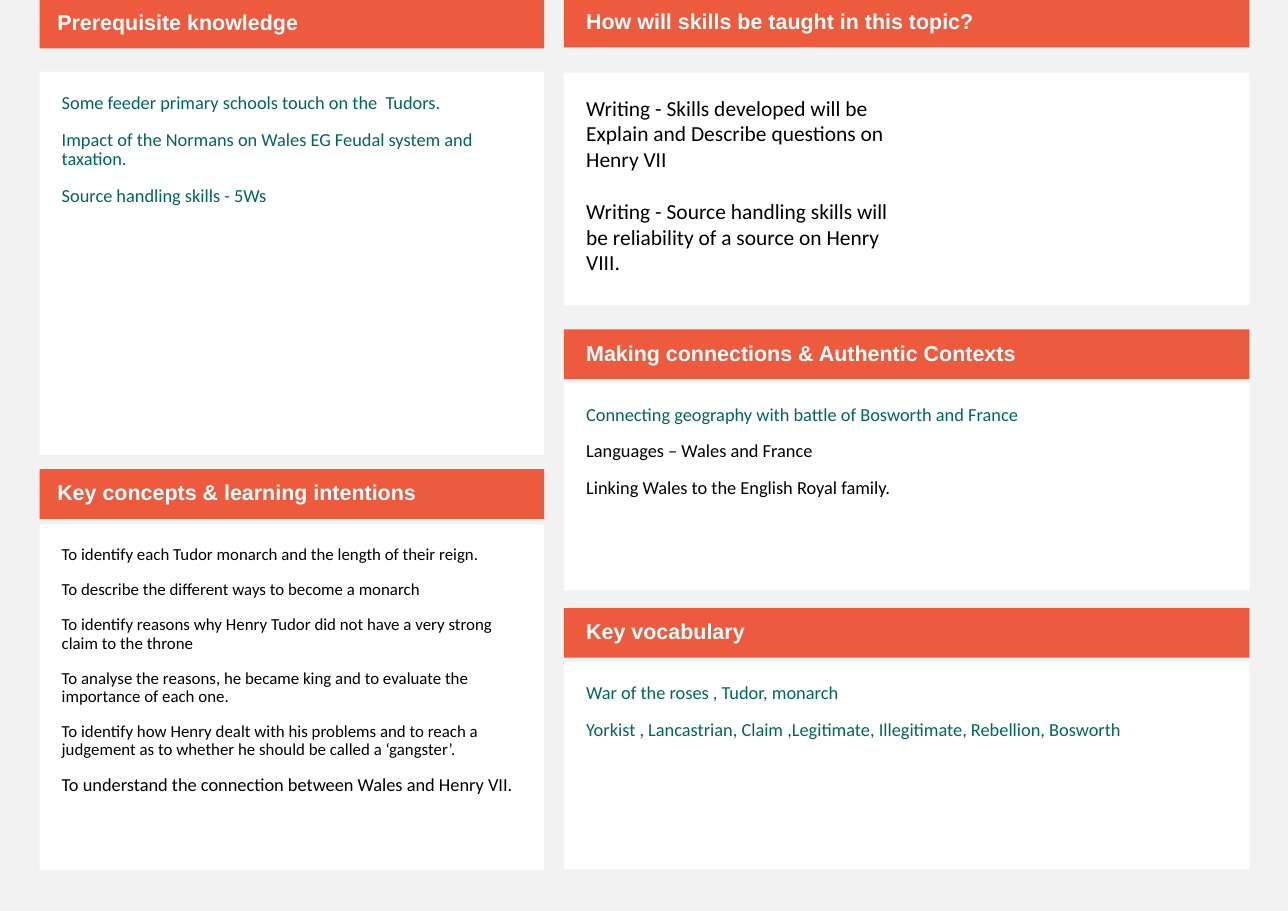
from pptx import Presentation
from pptx.dml.color import RGBColor
from pptx.enum.shapes import MSO_SHAPE as Shape
from pptx.enum.text import MSO_ANCHOR as Anchor, PP_ALIGN as Align
from pptx.util import Inches, Pt

COLOURS = {"page": "F2F2F2", "banner": "ED5A3E", "white": "FFFFFF",
           "green": "006758", "black": "000000"}

# Column: left, width, heading indent
LEFT = (0.36, 4.58, 0.16)
RIGHT = (5.12, 6.22, 0.2)
BANNER_HEIGHT = 0.45
PADDING = 0.2

# Section: column, heading, heading top, panel top, panel height, text columns,
# lines as (text, size, colour, space before, line spacing)
BODY = (11, 0.9)
SECTIONS = [
    (LEFT, "Prerequisite knowledge", -0.01, 0.65, 3.48, 1, [
        ("Some feeder primary schools touch on the  Tudors.", 12, "green", *BODY),
        ("Impact of the Normans on Wales EG Feudal system and taxation.", 12, "green", *BODY),
        ("Source handling skills - 5Ws", 12, "green", *BODY),
    ]),
    (LEFT, "Key concepts & learning intentions", 4.26, 4.76, 3.14, 1, [
        ("To identify each Tudor monarch and the length of their reign.", 11, "black", *BODY),
        ("To describe the different ways to become a monarch", 11, "black", *BODY),
        ("To identify reasons why Henry Tudor did not have a very strong claim to the throne",
         11, "black", *BODY),
        ("To analyse the reasons, he became king and to evaluate the importance of each one.",
         11, "black", *BODY),
        ("To identify how Henry dealt with his problems and to reach a judgement as to whether "
         "he should be called a ‘gangster’.", 11, "black", *BODY),
        ("To understand the connection between Wales and Henry VII.", 12, "black", *BODY),
    ]),
    (RIGHT, "How will skills be taught in this topic?", -0.02, 0.66, 2.11, 2, [
        ("Writing - Skills developed will be Explain and Describe questions on Henry VII",
         14, "black", 0, 1.0),
        ("Writing - Source handling skills will be reliability of a source on Henry",
         14, "black", 17, 1.0),
        ("VIII.", 14, "black", 0, 1.0),
    ]),
    (RIGHT, "Making connections & Authentic Contexts", 2.99, 3.48, 1.88, 1, [
        ("Connecting geography with battle of Bosworth and France", 12, "green", *BODY),
        ("Languages – Wales and France", 12, "black", *BODY),
        ("Linking Wales to the English Royal family.", 12, "black", *BODY),
    ]),
    (RIGHT, "Key vocabulary", 5.52, 6.01, 1.88, 1, [
        ("War of the roses , Tudor, monarch", 12, "green", *BODY),
        ("Yorkist , Lancastrian, Claim ,Legitimate, Illegitimate, Rebellion, Bosworth",
         12, "green", *BODY),
    ]),
]


def colour(key):
    return RGBColor.from_string(COLOURS[key])


def add_block(slide, box, fill, insets, anchor, lines, font, bold=False):
    """Add a filled rectangle and return its text frame."""
    block = slide.shapes.add_shape(Shape.RECTANGLE, *map(Inches, box))
    block.shadow.inherit = False
    block.fill.solid()
    block.fill.fore_color.rgb = colour(fill)
    block.line.fill.background()

    frame = block.text_frame
    frame.word_wrap = True
    frame.vertical_anchor = anchor
    (frame.margin_left, frame.margin_top,
     frame.margin_right, frame.margin_bottom) = map(Inches, insets)

    for index, (text, size, ink, before, spacing) in enumerate(lines):
        paragraph = frame.add_paragraph() if index else frame.paragraphs[0]
        paragraph.alignment = Align.LEFT
        paragraph.space_before = Pt(before)
        paragraph.line_spacing = spacing
        run = paragraph.add_run()
        run.text = text
        run.font.name = font
        run.font.size = Pt(size)
        run.font.bold = bold
        run.font.color.rgb = colour(ink)
    return frame


def main():
    deck = Presentation()
    deck.slide_width, deck.slide_height = Inches(11.69), Inches(8.27)
    slide = deck.slides.add_slide(deck.slide_layouts[6])
    slide.background.fill.solid()
    slide.background.fill.fore_color.rgb = colour("page")

    for column, heading, banner_top, panel_top, panel_height, text_columns, lines in SECTIONS:
        left, width, indent = column

        # White panel with the section's text
        panel = add_block(slide, (left, panel_top, width, panel_height), "white",
                          [PADDING] * 4, Anchor.TOP, lines, "Calibri")
        if text_columns > 1:
            panel._txBody.bodyPr.set("numCol", str(text_columns))

        # Heading banner
        add_block(slide, (left, banner_top, width, BANNER_HEIGHT), "banner",
                  (indent, 0.05, 0.1, 0.05), Anchor.MIDDLE,
                  [(heading, 14, "white", *BODY)], "Arial", bold=True)

    deck.save("out.pptx")


if __name__ == "__main__":
    main()
